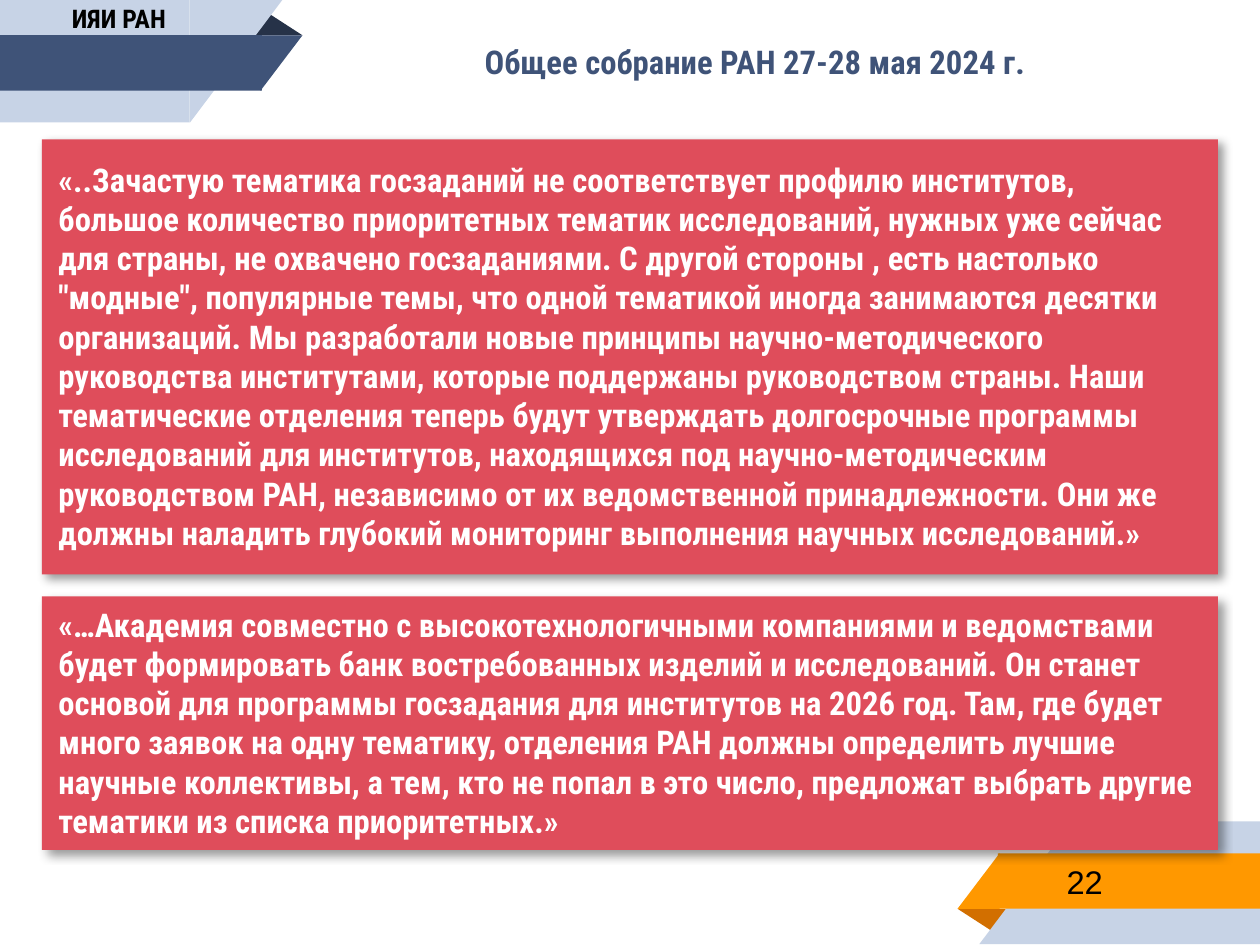
"""Build the slide with two quotes from the general meeting of the academy."""
from dataclasses import dataclass

from pptx import Presentation
from pptx.dml.color import RGBColor
from pptx.enum.shapes import MSO_SHAPE as Kind
from pptx.enum.text import MSO_ANCHOR as Anchor, PP_ALIGN as Align
from pptx.oxml import parse_xml
from pptx.oxml.ns import nsdecls, qn
from pptx.shapes.base import BaseShape
from pptx.slide import Slide
from pptx.util import Inches, Pt

PALE = RGBColor(0xC7, 0xD3, 0xE6)
NAVY = RGBColor(0x3F, 0x53, 0x78)
DARK = RGBColor(0x26, 0x32, 0x48)
AMBER = RGBColor(0xFF, 0x98, 0x00)
RUST = RGBColor(0xD2, 0x6F, 0x00)
RED = RGBColor(0xDF, 0x4D, 0x5B)
WHITE = RGBColor(0xFF, 0xFF, 0xFF)
BLACK = RGBColor(0, 0, 0)

WIDTH = 7.5
HEIGHT = WIDTH * 3 / 4

Box = tuple[float, float, float, float]

BOLD = {"name": "Roboto Condensed", "bold": True, "size": Pt(14)}
SMALL = BOLD | {"size": Pt(11)}
PLAIN = {"name": "Arial", "bold": False, "size": Pt(14)}
SHADOW = (
    f'<a:effectLst {nsdecls("a")}><a:outerShdw blurRad="{Pt(4)}" dist="{Pt(3)}" '
    'dir="2700000" algn="tl" rotWithShape="0"><a:srgbClr val="000000">'
    '<a:alpha val="40000"/></a:srgbClr></a:outerShdw></a:effectLst>'
)


@dataclass
class Part:
    """One flat piece of a corner ribbon."""
    kind: Kind
    box: Box
    fill: RGBColor
    turn: int = 0
    flip: bool = False


@dataclass
class Label:
    """A piece of text with its box and look."""
    text: str
    box: Box
    font: dict
    color: RGBColor
    align: Align = Align.LEFT
    anchor: Anchor = Anchor.TOP
    top: float = 0.05


PARTS = [
    Part(Kind.ISOSCELES_TRIANGLE, (5.7, 5.41, 0.32, 0.14), RUST, 180),
    Part(Kind.RECTANGLE, (6.38, 4.89, 1.12, 0.73), PALE),
    Part(Kind.RIGHT_TRIANGLE, (5.83, 4.89, 0.55, 0.73), PALE, 0, True),
    Part(Kind.RECTANGLE, (5.94, 5.08, 1.56, 0.33), AMBER),
    Part(Kind.RIGHT_TRIANGLE, (5.7, 5.08, 0.25, 0.33), AMBER, 0, True),
    Part(Kind.ISOSCELES_TRIANGLE, (1.48, 0.07, 0.32, 0.14), DARK),
    Part(Kind.RECTANGLE, (0, 0, 1.13, 0.73), PALE),
    Part(Kind.RIGHT_TRIANGLE, (1.13, 0, 0.55, 0.73), PALE, 180, True),
    Part(Kind.RECTANGLE, (0, 0.21, 1.56, 0.33), NAVY),
    Part(Kind.RIGHT_TRIANGLE, (1.55, 0.21, 0.25, 0.33), NAVY, 180, True),
]

LABELS = [
    Label("22", (6.25, 5.07, 1.22, 0.35), PLAIN, BLACK, anchor=Anchor.MIDDLE),
    Label("ИЯИ РАН", (0.33, -0.03, 0.96, 0.29), SMALL, BLACK),
    Label("Общее собрание РАН 27-28 мая 2024 г.", (2.62, 0.2, 3.75, 0.34),
          BOLD, NAVY, Align.CENTER),
]

QUOTES = [
    Label(
        "«..Зачастую тематика госзаданий не соответствует профилю институтов, "
        "большое количество приоритетных тематик исследований, нужных уже "
        "сейчас для страны, не охвачено госзаданиями. С другой стороны , есть "
        "настолько \"модные\", популярные темы, что одной тематикой иногда "
        "занимаются десятки организаций. Мы разработали новые принципы "
        "научно-методического руководства институтами, которые поддержаны "
        "руководством страны. Наши тематические отделения теперь будут "
        "утверждать долгосрочные программы исследований для институтов, "
        "находящихся под научно-методическим руководством РАН, независимо от "
        "их ведомственной принадлежности. Они же должны наладить глубокий "
        "мониторинг выполнения научных исследований.»",
        (0.25, 0.83, 7, 2.59), BOLD, WHITE, top=0.12),
    Label(
        "«…Академия совместно с высокотехнологичными компаниями и ведомствами "
        "будет формировать банк востребованных изделий и исследований. Он "
        "станет основой для программы госзадания для институтов на 2026 год. "
        "Там, где будет много заявок на одну тематику, отделения РАН должны "
        "определить лучшие научные коллективы, а тем, кто не попал в это "
        "число, предложат выбрать другие тематики из списка приоритетных.»",
        (0.25, 3.55, 7, 1.51), BOLD, WHITE),
]


def draw(slide: Slide, part: Part) -> BaseShape:
    """Add a flat shape without line or shadow."""
    shape = slide.shapes.add_shape(part.kind, *map(Inches, part.box))
    shape.shadow.inherit = False
    shape.fill.solid()
    shape.fill.fore_color.rgb = part.fill
    shape.line.fill.background()
    shape.rotation = part.turn
    if part.flip:
        shape.element.spPr.find(qn("a:xfrm")).set("flipH", "1")
    if part.kind == Kind.ISOSCELES_TRIANGLE:
        shape.adjustments[0] = 0.324
    return shape


def write(shape: BaseShape, label: Label) -> None:
    """Put the text of a label into a shape."""
    frame = shape.text_frame
    look = {"word_wrap": True, "vertical_anchor": label.anchor,
            "margin_top": Inches(label.top)}
    for key, value in look.items():
        setattr(frame, key, value)
    para = frame.paragraphs[0]
    para.alignment = label.align
    run = para.add_run()
    run.text = label.text
    for key, value in label.font.items():
        setattr(run.font, key, value)
    run.font.color.rgb = label.color


def quote(slide: Slide, label: Label) -> None:
    """Add a red panel with a soft shadow and its quote."""
    panel = draw(slide, Part(Kind.RECTANGLE, label.box, RED))
    props = panel.element.spPr
    props.replace(props.find(qn("a:effectLst")), parse_xml(SHADOW))
    write(panel, label)


def main() -> None:
    """Build and save the deck."""
    deck = Presentation()
    deck.slide_width, deck.slide_height = Inches(WIDTH), Inches(HEIGHT)
    slide = deck.slides.add_slide(deck.slide_layouts[6])
    for part in PARTS:
        draw(slide, part)
    for label in LABELS:
        write(slide.shapes.add_textbox(*map(Inches, label.box)), label)
    for label in QUOTES:
        quote(slide, label)
    deck.save("out.pptx")


if __name__ == "__main__":
    main()
